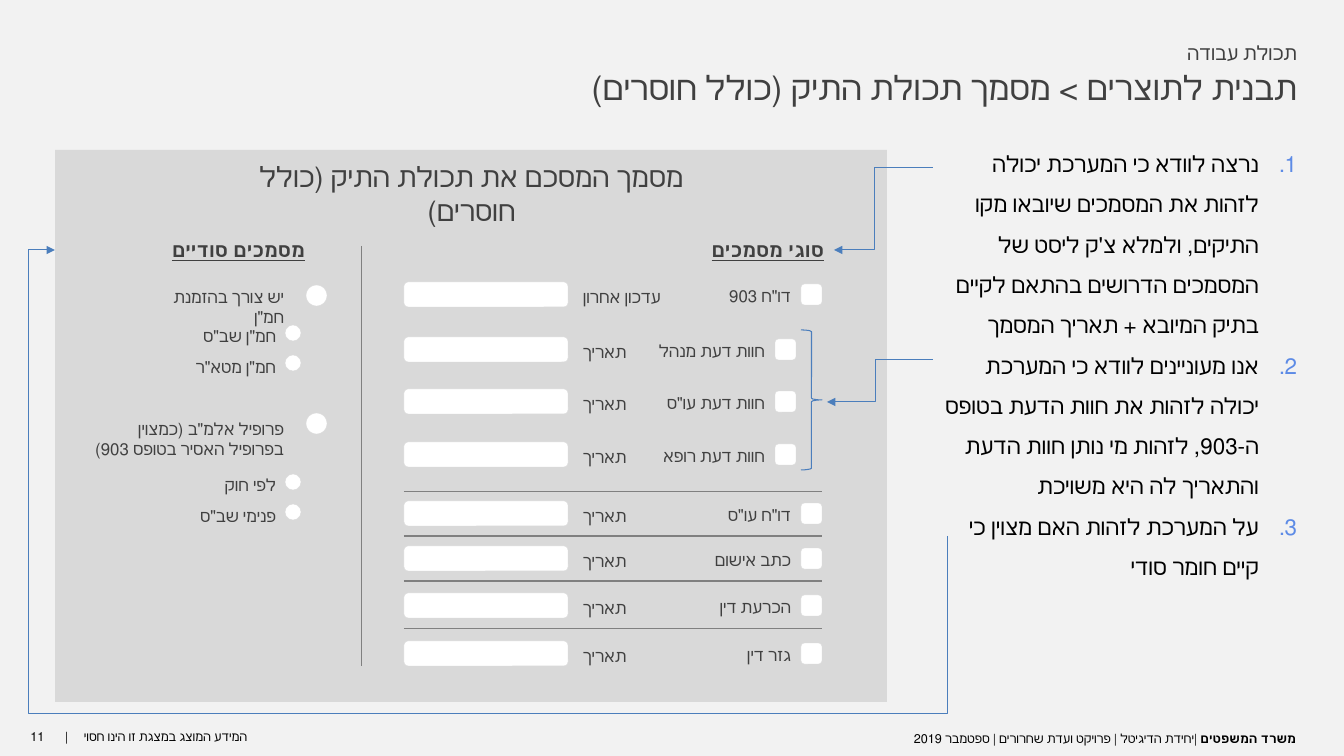
from lxml import etree
from pptx import Presentation, util as u
from pptx.dml.color import RGBColor
from pptx.enum import shapes, text
from pptx.oxml.ns import qn

# Content
C = {"bg": "F2F2F2", "panel": "D9D9D9", "white": "FFFFFF", "ink": "404040",
     "black": "000000", "rule": "808080", "arrow": "4B7EBC", "number": "5D8BE6"}
SUBTITLE = "תכולת עבודה"
TITLE = "תבנית לתוצרים > מסמך תכולת התיק (כולל חוסרים)"
PANEL_TITLE = "מסמך המסכם את תכולת התיק (כולל חוסרים)"
NOTES = [
    "נרצה לוודא כי המערכת יכולה לזהות את המסמכים שיובאו מקו התיקים, ולמלא צ'ק ליסט של המסמכים הדרושים בהתאם לקיים בתיק המיובא + תאריך המסמך",
    "אנו מעוניינים לוודא כי המערכת יכולה לזהות את חוות הדעת בטופס ה-903, לזהות מי נותן חוות הדעת והתאריך לה היא משויכת",
    "על המערכת לזהות האם מצוין כי קיים חומר סודי",
]
# label, field label, top, belongs to the braced group
DOCUMENTS = [
    ('דו"ח 903', "עדכון אחרון", 282, False),
    ("חוות דעת מנהל", "תאריך", 337, True),
    ('חוות דעת עו"ס', "תאריך", 389, True),
    ("חוות דעת רופא", "תאריך", 442, True),
    ('דו"ח עו"ס', "תאריך", 501, False),
    ("כתב אישום", "תאריך", 546, False),
    ("הכרעת דין", "תאריך", 593, False),
    ("גזר דין", "תאריך", 641, False),
]
RULES = [492, 536, 581, 629]
# option, text box (left, top, width), circle top, sub-options, sub-options top
SECRET = [
    ('יש צורך בהזמנת חמ"ן', (130, 282, 164), 285, ['חמ"ן שב"ס', 'חמ"ן מטא"ר'], 311),
    ('פרופיל אלמ"ב (כמצוין בפרופיל האסיר בטופס 903)', (81, 414, 213), 413,
     ["לפי חוק", 'פנימי שב"ס'], 460),
]
FOOTER = "|יחידת הדיגיטל | פרויקט ועדת שחרורים | ספטמבר 2019"
KIND = shapes.MSO_SHAPE
RIGHT, CENTER, LEFT = text.PP_ALIGN.RIGHT, text.PP_ALIGN.CENTER, text.PP_ALIGN.LEFT

prs = Presentation()


def px(n):
    return u.Emu(round(n * 914400 / 100.8))


prs.slide_width, prs.slide_height = px(1344), px(756)
s = prs.slides.add_slide(prs.slide_layouts[6])


def rgb(name):
    return RGBColor.from_string(C[name])


s.background.fill.solid()
s.background.fill.fore_color.rgb = rgb("bg")


def style(r, size, font, color, bold=False, underline=False):
    f = r.font
    f.size, f.name, f.color.rgb = u.Pt(size), font, rgb(color)
    if bold:
        f.bold = True
    if underline:
        f.underline = True


def write(lines, x, y, w, h, size=12, font="Roboto", color="ink", align=RIGHT,
          spacing=None, **look):
    sp = s.shapes.add_textbox(px(x), px(y), px(w), px(h))
    tf = sp.text_frame
    tf.word_wrap = True
    tf.auto_size = text.MSO_AUTO_SIZE.SHAPE_TO_FIT_TEXT
    tf.text = "\n".join(lines)
    for p in tf.paragraphs:
        p.alignment = align
        p._p.get_or_add_pPr().set("rtl", "1")
        if spacing:
            p.line_spacing = spacing
        for r in p.runs:
            style(r, size, font, color, **look)
    return tf


def draw(kind, x, y, w, h, fill=None, line=None, weight=0.25):
    sp = s.shapes.add_shape(kind, px(x), px(y), px(w), px(h))
    sp.shadow.inherit = False
    if fill:
        sp.fill.solid()
        sp.fill.fore_color.rgb = rgb(fill)
    else:
        sp.fill.background()
    if line:
        sp.line.color.rgb, sp.line.width = rgb(line), u.Pt(weight)
    else:
        sp.line.fill.background()


def connect(x1, y1, x2, y2, color="rule", kind=shapes.MSO_CONNECTOR.STRAIGHT):
    c = s.shapes.add_connector(kind, px(x1), px(y1), px(x2), px(y2))
    c.line.color.rgb, c.line.width = rgb(color), u.Pt(0.75)
    etree.SubElement(c._element.spPr, qn("a:effectLst"))
    return c


def elbow(x1, y1, x2, y2, *bends):
    c = connect(x1, y1, x2, y2, "arrow", shapes.MSO_CONNECTOR.ELBOW)
    geom = c._element.spPr.find(qn("a:prstGeom"))
    geom.set("prst", f"bentConnector{len(bends) + 2}")
    guides = geom.get_or_add_avLst()
    for i, bend in enumerate(bends, 1):
        etree.SubElement(guides, qn("a:gd"), name=f"adj{i}",
                         fmla=f"val {round(bend * 100000)}")
    etree.SubElement(c.line._get_or_add_ln(), qn("a:tailEnd"), type="triangle")
    return c


# Footer
write(["11"], 5, 724, 65, 31, 9, "Calibri", "black", CENTER)
write(["|"], 54, 724, 24, 31, 9, "Calibri", "black")
write(["המידע המוצג במצגת זו הינו חסוי"], 57, 724, 200, 31, 9, "Calibri", "black")
tf = write(["משרד המשפטים "], 382, 724, 929, 30, 9, "Calibri", "black", bold=True)
tf.margin_left = tf.margin_right = px(15)
tf.margin_top = px(7)
r = tf.paragraphs[0].add_run()
r.text = FOOTER
style(r, 9, "Calibri", "black")

# Numbered notes and headings
tf = write(NOTES, 922, 132, 385, 499, 16, "Calibri", "black", spacing=1.5)
for p in tf.paragraphs:
    pPr = p._p.get_or_add_pPr()
    pPr.set("marL", str(px(38)))
    pPr.set("indent", str(-px(38)))
    clr = etree.SubElement(pPr, qn("a:buClr"))
    etree.SubElement(clr, qn("a:srgbClr"), val=C["number"])
    etree.SubElement(pPr, qn("a:buFont"), typeface="+mj-lt")
    etree.SubElement(pPr, qn("a:buAutoNum"), type="arabicPeriod")
write([TITLE], 416, 62, 891, 50, 24)
write([SUBTITLE], 960, 36, 347, 34, 14)

# Form panel
draw(KIND.RECTANGLE, 55, 150, 832, 552, "panel")
write([PANEL_TITLE], 209, 155, 525, 44, 20, align=CENTER)
write(["סוגי מסמכים"], 487, 233, 347, 34, 14, bold=True, underline=True)
write(["מסמכים סודיים"], 55, 233, 260, 34, 14, bold=True, underline=True)
connect(362, 246, 362, 666)

# Document checklist
for label, field, y, grouped in DOCUMENTS:
    box_x, label_w = (775, 157) if grouped else (801, 105)
    write([label], box_x - label_w, y - 1, label_w, 31)
    write([field], 573, y, 127, 31, align=LEFT)
    draw(KIND.ROUNDED_RECTANGLE, 404, y, 164, 25, "white", "panel")
    draw(KIND.ROUNDED_RECTANGLE, box_x, y + 2, 21, 21, "white", "panel")
for y in RULES:
    connect(404, y, 822, y)

# Secret documents
for option, (x, y, w), circle_y, subs, subs_y in SECRET:
    write([option], x, y, w, 31)
    draw(KIND.OVAL, 306, circle_y, 21, 21, "white", "panel")
    write(subs, 73, subs_y, 213, 70, spacing=1.5)
    for i in range(len(subs)):
        draw(KIND.OVAL, 285, subs_y + 14 + 30 * i, 16, 16, "white", "panel")

# Arrows from notes to form
elbow(933, 168, 834, 250, 0.59)
elbow(933, 360, 827, 402, 0.54)
draw(KIND.RIGHT_BRACE, 801, 330, 21, 140, line="arrow", weight=0.75)
# The long arrow is laid out upright around its centre, then turned a quarter
x1, y1, x2, y2 = 948, 536, 55, 250
mid_x, mid_y = (x1 + x2) / 2, (y1 + y2) / 2
half_w, half_h = (y1 - y2) / 2, (x1 - x2) / 2
c = elbow(mid_x + half_w, mid_y - half_h, mid_x - half_w, mid_y + half_h, -0.62, 1.03)
c._element.spPr.find(qn("a:xfrm")).set("rot", str(90 * 60000))

prs.save("out.pptx")
